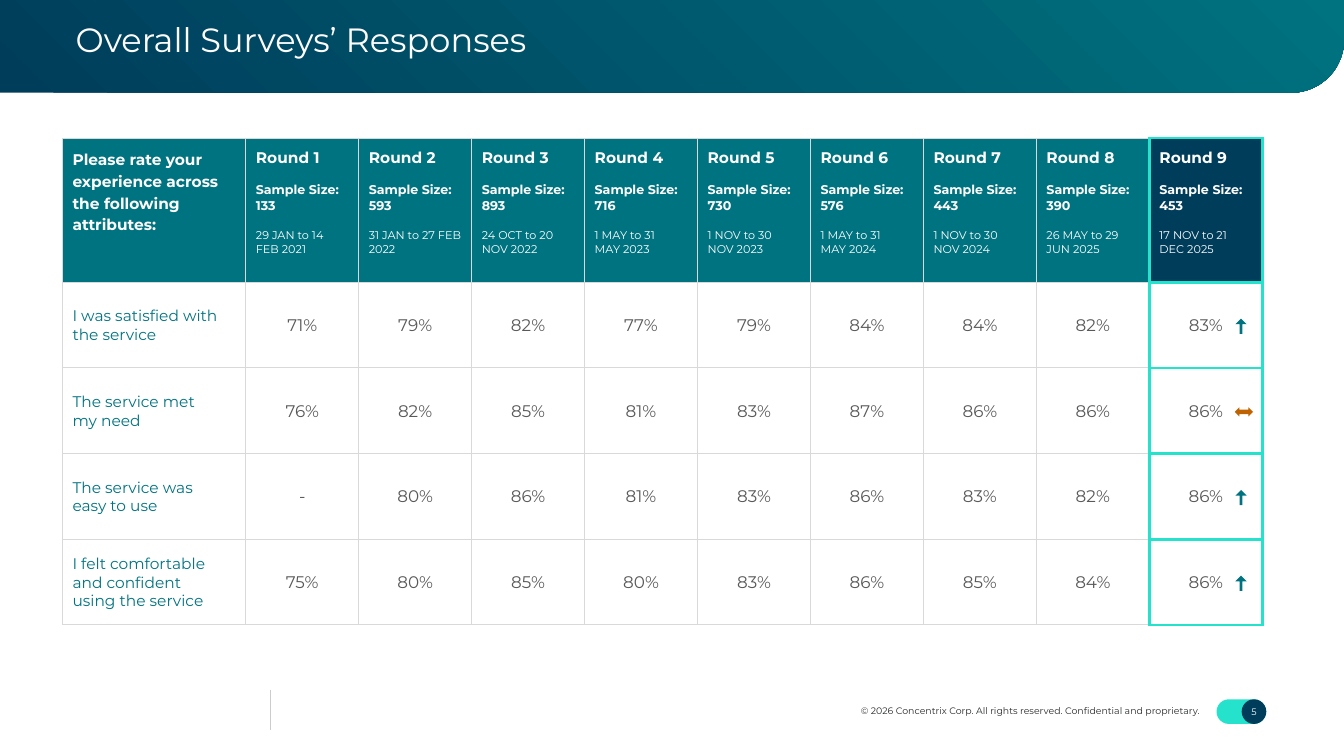
from dataclasses import dataclass

from lxml.etree import SubElement
from pptx import Presentation
from pptx.dml.color import RGBColor
from pptx.enum.shapes import MSO_CONNECTOR, MSO_SHAPE
from pptx.enum.text import MSO_ANCHOR as ANCHOR, PP_ALIGN as ALIGN
from pptx.oxml.ns import qn
from pptx.util import Pt


@dataclass(frozen=True)
class Theme:
    """Colours, type sizes and font of the slide."""
    font: str = "Montserrat"
    navy: str = "003D5B"
    teal: str = "007380"
    mint: str = "25E2CC"
    amber: str = "BF6300"
    white: str = "FFFFFF"
    grey: str = "595959"
    ink: str = "2A2B2C"
    grid: str = "D9D9D9"
    rule: str = "CCCCCC"
    title: float = 24
    value: float = 12
    label: float = 11
    sample: float = 9
    date: float = 8
    footer: float = 6.7


T = Theme()
LEFT, TOP = 44.6, 98.6
LABEL_W, ROUND_W = 131, 80.7
HEAD_H, ROW_H = 103, 61.2
HEAD_INSETS = (7.2, 7.2, 7.2, 7.2)
LABEL_INSETS = (7.2, 0.7, 18.7, 0)
VALUE_INSETS = (18.7, 0.7, 18.7, 0)

QUESTION = "Please rate your experience across the following attributes:"
ROUNDS = [
    (133, "29 JAN to 14 FEB 2021"),
    (593, "31 JAN to 27 FEB 2022"),
    (893, "24 OCT to 20 NOV 2022"),
    (716, "1 MAY to 31", "MAY 2023"),
    (730, "1 NOV to 30 NOV 2023"),
    (576, "1 MAY to 31", "MAY 2024"),
    (443, "1 NOV to 30 NOV 2024"),
    (390, "26 MAY to 29 JUN 2025"),
    (453, "17 NOV to 21 DEC 2025"),
]
RATINGS = [
    ("I was satisfied with the service", "up", [71, 79, 82, 77, 79, 84, 84, 82, 83]),
    ("The service met my need", "level", [76, 82, 85, 81, 83, 87, 86, 86, 86]),
    ("The service was easy to use", "up", [None, 80, 86, 81, 83, 86, 83, 82, 86]),
    ("I felt comfortable and confident using the service", "up",
     [75, 80, 85, 80, 83, 86, 85, 84, 86]),
]


def rgb(color):
    """Turn a hex string into a colour."""
    return RGBColor.from_string(color)


def write(p, text, size, color, bold=False, align=ALIGN.LEFT, before=0):
    """Put styled text in a paragraph."""
    p.text, p.alignment = text, align
    if before:
        p.space_before = Pt(before)
    p.font.name, p.font.size, p.font.bold = T.font, Pt(size), bold
    p.font.color.rgb = rgb(color)


def set_insets(box, insets):
    """Set the left, top, right and bottom margins of a frame or cell."""
    box.margin_left, box.margin_top, box.margin_right, box.margin_bottom = map(Pt, insets)


def add_text(s, box, text, size, color, align=ALIGN.LEFT, anchor=ANCHOR.MIDDLE,
             insets=(0, 0, 0, 0)):
    """Add a one-paragraph text box."""
    tf = s.shapes.add_textbox(*map(Pt, box)).text_frame
    tf.word_wrap, tf.vertical_anchor = True, anchor
    set_insets(tf, insets)
    write(tf.paragraphs[0], text, size, color, align=align)


def add_shape(s, kind, box, color, adjustments=()):
    """Add a plain filled shape without outline."""
    sp = s.shapes.add_shape(kind, *map(Pt, box))
    sp.shadow.inherit = False
    sp.line.fill.background()
    sp.fill.solid()
    sp.fill.fore_color.rgb = rgb(color)
    for i, value in enumerate(adjustments):
        sp.adjustments[i] = value
    return sp


def add_banner(s):
    """Add the gradient title band with its rounded lower right corner."""
    sp = add_shape(s, MSO_SHAPE.ROUND_1_RECTANGLE, (0, -9.4, 960, 75.6), T.navy, [0.5])
    sp.rotation = 180
    sp.element.spPr.find(qn("a:xfrm")).set("flipH", "1")
    sp.fill.gradient()
    sp.fill.gradient_angle = 315
    for stop, color, position in zip(sp.fill.gradient_stops, (T.navy, T.teal), (0, 1)):
        stop.color.rgb, stop.position = rgb(color), position


def add_footer(s):
    """Add the footer rule, copyright line and page number pill."""
    line = s.shapes.add_connector(MSO_CONNECTOR.STRAIGHT, Pt(193), Pt(493), Pt(193), Pt(521.3))
    line.line.color.rgb, line.line.width = rgb(T.rule), Pt(0.75)
    SubElement(line.element.spPr, qn("a:effectLst"))
    add_text(s, (494.6, 504, 362.9, 8),
             "© 2026 Concentrix Corp. All rights reserved. Confidential and proprietary.",
             T.footer, T.ink, ALIGN.RIGHT)
    add_shape(s, MSO_SHAPE.ROUNDED_RECTANGLE, (869, 499.5, 35.5, 17.6), T.mint, [0.5])
    add_shape(s, MSO_SHAPE.OVAL, (886.9, 499.5, 17.6, 17.6), T.navy)
    add_text(s, (883.2, 495.3, 25, 26), "5", T.footer, T.white, ALIGN.CENTER)


def style_cell(cell, col, fill, insets, anchor):
    """Set borders, fill, margins and anchor of a cell."""
    last = len(ROUNDS)
    accented = {last: "LRTB", last - 1: "R"}.get(col, "")
    for side in "LRTB":
        color, width = (T.mint, 2.25) if side in accented else (T.grid, 0.75)
        ln = SubElement(cell._tc.get_or_add_tcPr(), qn(f"a:ln{side}"), w=str(Pt(width)))
        SubElement(SubElement(ln, qn("a:solidFill")), qn("a:srgbClr"), val=color)
    cell.fill.solid()
    cell.fill.fore_color.rgb = rgb(fill)
    cell.vertical_anchor = anchor
    set_insets(cell, insets)


def fill_round_header(cell, number, sample, dates):
    """Write the round name, sample size and dates."""
    tf = cell.text_frame
    write(tf.paragraphs[0], f"Round {number}", T.label, T.white, True)
    write(tf.add_paragraph(), f"Sample Size: {sample}", T.sample, T.white, True, before=11)
    for i, date in enumerate(dates):
        write(tf.add_paragraph(), date, T.date, T.white, before=0 if i else 11)


def add_ratings_table(s):
    """Add the table of ratings by survey round."""
    width, height = LABEL_W + ROUND_W * len(ROUNDS), HEAD_H + ROW_H * len(RATINGS)
    table = s.shapes.add_table(len(RATINGS) + 1, len(ROUNDS) + 1,
                               Pt(LEFT), Pt(TOP), Pt(width), Pt(height)).table
    table.first_row = table.horz_banding = False
    for i, column in enumerate(table.columns):
        column.width = Pt(ROUND_W if i else LABEL_W)
    for i, row in enumerate(table.rows):
        row.height = Pt(ROW_H if i else HEAD_H)

    question = table.cell(0, 0)
    style_cell(question, 0, T.teal, HEAD_INSETS, ANCHOR.TOP)
    write(question.text_frame.paragraphs[0], QUESTION, T.label, T.white, True)
    question.text_frame.paragraphs[0].line_spacing = 1.15
    for col, (sample, *dates) in enumerate(ROUNDS, 1):
        cell = table.cell(0, col)
        style_cell(cell, col, T.navy if col == len(ROUNDS) else T.teal, HEAD_INSETS, ANCHOR.TOP)
        fill_round_header(cell, col, sample, dates)

    for row, (label, _, values) in enumerate(RATINGS, 1):
        cell = table.cell(row, 0)
        style_cell(cell, 0, T.white, LABEL_INSETS, ANCHOR.MIDDLE)
        write(cell.text_frame.paragraphs[0], label, T.label, T.teal)
        for col, value in enumerate(values, 1):
            cell = table.cell(row, col)
            style_cell(cell, col, T.white, VALUE_INSETS, ANCHOR.MIDDLE)
            text = "-" if value is None else f"{value}%"
            write(cell.text_frame.paragraphs[0], text, T.value, T.grey, align=ALIGN.CENTER)


def add_trend(s, row, trend):
    """Add the trend arrow beside the latest rating of a row."""
    middle = TOP + HEAD_H + ROW_H * (row + 0.5) + 0.8
    if trend == "up":
        add_shape(s, MSO_SHAPE.UP_ARROW, (882.5, middle - 5.4, 8, 10.8), T.teal, [0.25, 0.5])
    else:
        add_shape(s, MSO_SHAPE.LEFT_RIGHT_ARROW, (882, middle - 3.2, 13, 6.5), T.amber)


def main():
    """Build and save the slide."""
    prs = Presentation()
    prs.slide_width, prs.slide_height = Pt(960), Pt(540)
    s = prs.slides.add_slide(prs.slide_layouts[6])
    add_footer(s)
    add_banner(s)
    add_text(s, (54, 4.3, 446.4, 48.2), "Overall Surveys’ Responses", T.title, T.white,
             anchor=ANCHOR.TOP, insets=(0, 9.4, 9.4, 9.4))
    add_ratings_table(s)
    for row, (_, trend, _) in enumerate(RATINGS):
        add_trend(s, row, trend)
    prs.save("out.pptx")


if __name__ == "__main__":
    main()
